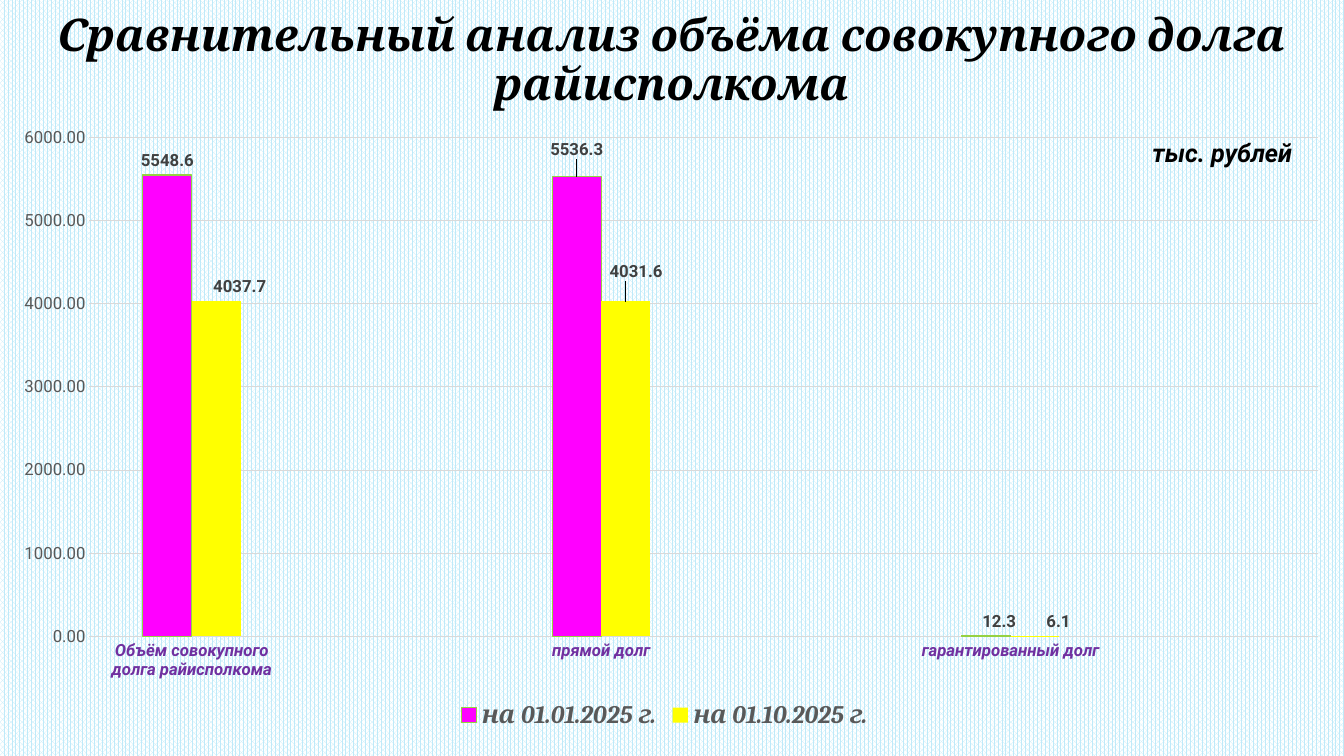
from dataclasses import dataclass

from lxml import etree
from pptx import Presentation
from pptx import util as u
from pptx.chart import data as chart_data
from pptx.dml import color
from pptx.enum import chart as ch, dml, text
from pptx.oxml import ns


@dataclass(frozen=True)
class Theme:
    heading_font: str = "Cambria"
    body_font: str = "Roboto"
    black: str = "000000"
    axis_text: str = "595959"
    label_text: str = "404040"
    category_text: str = "7030A0"
    grid: str = "D9D9D9"
    bar_line: str = "96D141"
    backdrop: str = "BFEAF9"
    paper: str = "FFFFFF"
    heading_size: int = 32
    large_size: int = 18
    small_size: int = 12


THEME = Theme()
DEBT_KINDS = ["Объём совокупного долга райисполкома", "", "прямой долг", "", "гарантированный долг", ""]
DATES = [
    ("на 01.01.2025 г.", [5548.6, None, 5536.3, None, 12.3, None], "FF00FF", THEME.bar_line,
     {2: (0, -0.02), 4: (0.01, 0)}),
    ("на 01.10.2025 г.", [4037.7, None, 4031.6, None, 6.1, None], "FFFF00", None,
     {0: (0.018, 0), 2: (0.008, -0.026), 4: (0.018, 0)}),
]


def rgb(value):
    return color.RGBColor.from_string(value)


def style_font(font, size=THEME.small_size, ink=THEME.black, face=THEME.body_font, bold=False, italic=False):
    font.size = u.Pt(size)
    font.name = face
    font.bold = bold
    font.italic = italic
    font.color.rgb = rgb(ink)


def write_text(frame, words, align=text.PP_ALIGN.CENTER, spacing=1.0, **style):
    paragraph = frame.paragraphs[0]
    paragraph.alignment = align
    paragraph.line_spacing = spacing
    run = paragraph.add_run()
    run.text = words
    style_font(run.font, **style)


def style_line(line, ink):
    line.color.rgb = rgb(ink)
    line.width = u.Pt(0.75)


def manual_layout(**settings):
    layout = etree.Element(ns.qn("c:layout"))
    manual = etree.SubElement(layout, ns.qn("c:manualLayout"))
    for key, value in settings.items():
        etree.SubElement(manual, ns.qn(f"c:{key}")).set("val", str(value))
    return layout


def paint_background(slide):
    fill = slide.background.fill
    fill.patterned()
    fill.pattern = dml.MSO_PATTERN.PERCENT_75
    fill.fore_color.rgb = rgb(THEME.backdrop)
    fill.back_color.rgb = rgb(THEME.paper)


def add_heading(slide, words):
    frame = slide.shapes.add_textbox(0, 0, u.Cm(33.87), u.Cm(3.1)).text_frame
    frame.word_wrap = True
    frame.vertical_anchor = text.MSO_ANCHOR.MIDDLE
    write_text(frame, words, spacing=0.9, size=THEME.heading_size, face=THEME.heading_font,
               bold=True, italic=True)


def add_unit(chart, words):
    chart.has_title = True
    write_text(chart.chart_title.text_frame, words, size=THEME.large_size, bold=True, italic=True)
    title = chart.chart_title._element
    for old in title.findall(ns.qn("c:layout")):
        title.remove(old)
    title.find(ns.qn("c:tx")).addnext(manual_layout(xMode="edge", yMode="edge", x=0.87, y=0.02))
    chart.chart_title.include_in_layout = False
    title.find(ns.qn("c:overlay")).set("val", "1")


def style_axes(chart):
    kinds, amounts = chart.category_axis, chart.value_axis
    for axis in (kinds, amounts):
        axis.major_tick_mark = axis.minor_tick_mark = ch.XL_TICK_MARK.NONE
    style_font(kinds.tick_labels.font, ink=THEME.category_text, bold=True, italic=True)
    style_line(kinds.format.line, THEME.grid)
    kinds.has_major_gridlines = False
    style_font(amounts.tick_labels.font, ink=THEME.axis_text)
    amounts.tick_labels.number_format = "0.00"
    amounts.tick_labels.number_format_is_linked = False
    amounts.minimum_scale, amounts.maximum_scale, amounts.major_unit = 0, 6000, 1000
    amounts.format.line.fill.background()
    amounts.has_major_gridlines = True
    style_line(amounts.major_gridlines.format.line, THEME.grid)


def style_bars(bars, fill, outline, offsets):
    bars.format.fill.solid()
    bars.format.fill.fore_color.rgb = rgb(fill)
    bars.invert_if_negative = False
    if outline:
        style_line(bars.format.line, outline)
    else:
        bars.format.line.fill.background()
    labels = bars.data_labels
    labels.show_value = True
    labels.position = ch.XL_LABEL_POSITION.OUTSIDE_END
    style_font(labels.font, ink=THEME.label_text, bold=True)
    for index, (x, y) in offsets.items():
        label = bars.points[index].data_label
        style_font(label.font, ink=THEME.label_text, bold=True)
        label.position = ch.XL_LABEL_POSITION.OUTSIDE_END
    for moved in labels._element.findall(ns.qn("c:dLbl")):
        place = moved.find(ns.qn("c:idx"))
        x, y = offsets[int(place.get("val"))]
        place.addnext(manual_layout(x=x, y=y))


def add_debt_chart(slide):
    debts = chart_data.CategoryChartData(number_format="General")
    debts.categories = DEBT_KINDS
    for name, amounts, *_ in DATES:
        debts.add_series(name, amounts)
    chart = slide.shapes.add_chart(ch.XL_CHART_TYPE.COLUMN_CLUSTERED, u.Cm(0.28), u.Cm(3),
                                   u.Cm(32.94), u.Cm(15.52), debts).chart
    style_font(chart.font, size=10)
    add_unit(chart, "тыс. рублей")
    style_axes(chart)
    plot = chart.plots[0]
    plot.gap_width = 219
    plot.overlap = 0
    plot.vary_by_categories = False
    for bars, (_, _, fill, outline, offsets) in zip(plot.series, DATES):
        style_bars(bars, fill, outline, offsets)
    chart.has_legend = True
    chart.legend.position = ch.XL_LEGEND_POSITION.BOTTOM
    chart.legend.include_in_layout = False
    style_font(chart.legend.font, size=THEME.large_size, ink=THEME.axis_text,
               face=THEME.heading_font, bold=True, italic=True)
    area = chart._chartSpace.chart.plotArea
    for old in area.findall(ns.qn("c:layout")):
        area.remove(old)
    area.insert(0, manual_layout(layoutTarget="inner", xMode="edge", yMode="edge",
                                 x=0.06, y=0.03, w=0.94, h=0.81))


def main():
    deck = Presentation()
    deck.slide_width, deck.slide_height = u.Cm(33.87), u.Cm(19.05)
    slide = deck.slides.add_slide(deck.slide_layouts[6])
    paint_background(slide)
    add_debt_chart(slide)
    add_heading(slide, "Сравнительный анализ объёма совокупного долга райисполкома")
    deck.save("out.pptx")


if __name__ == "__main__":
    main()
